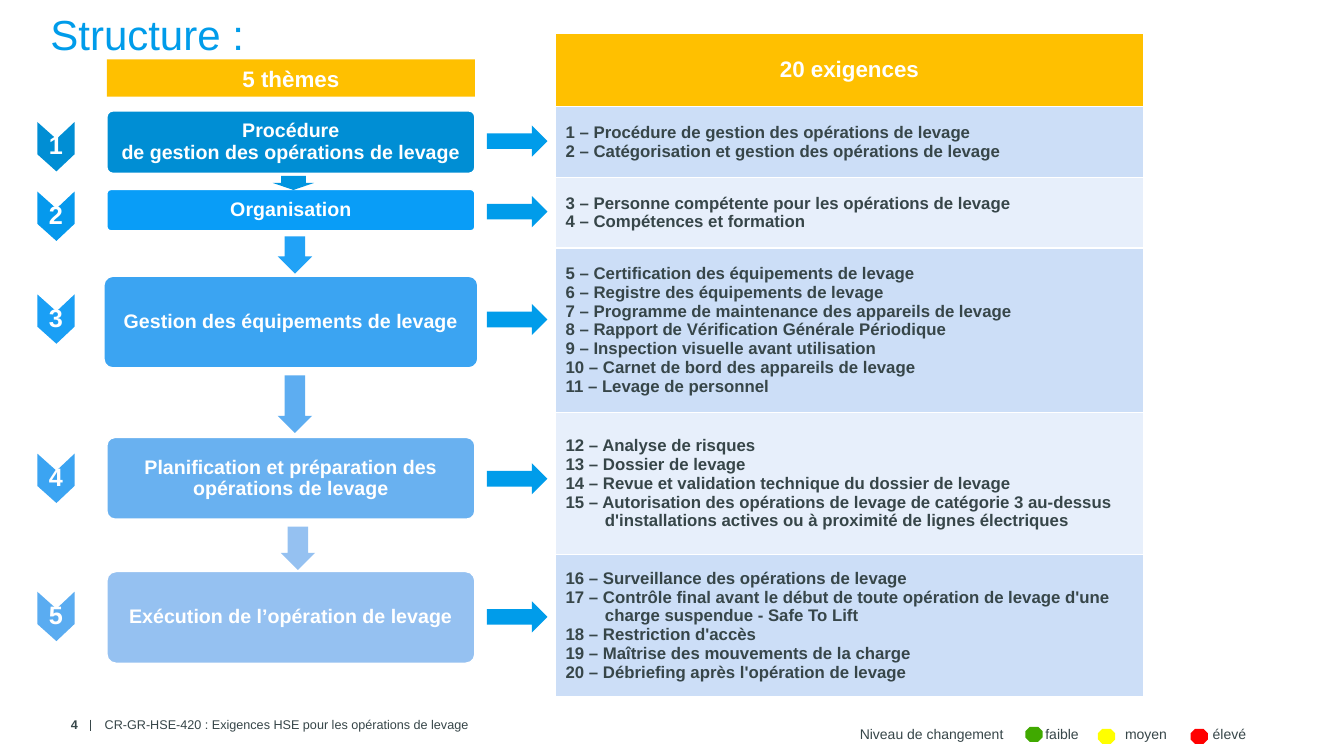
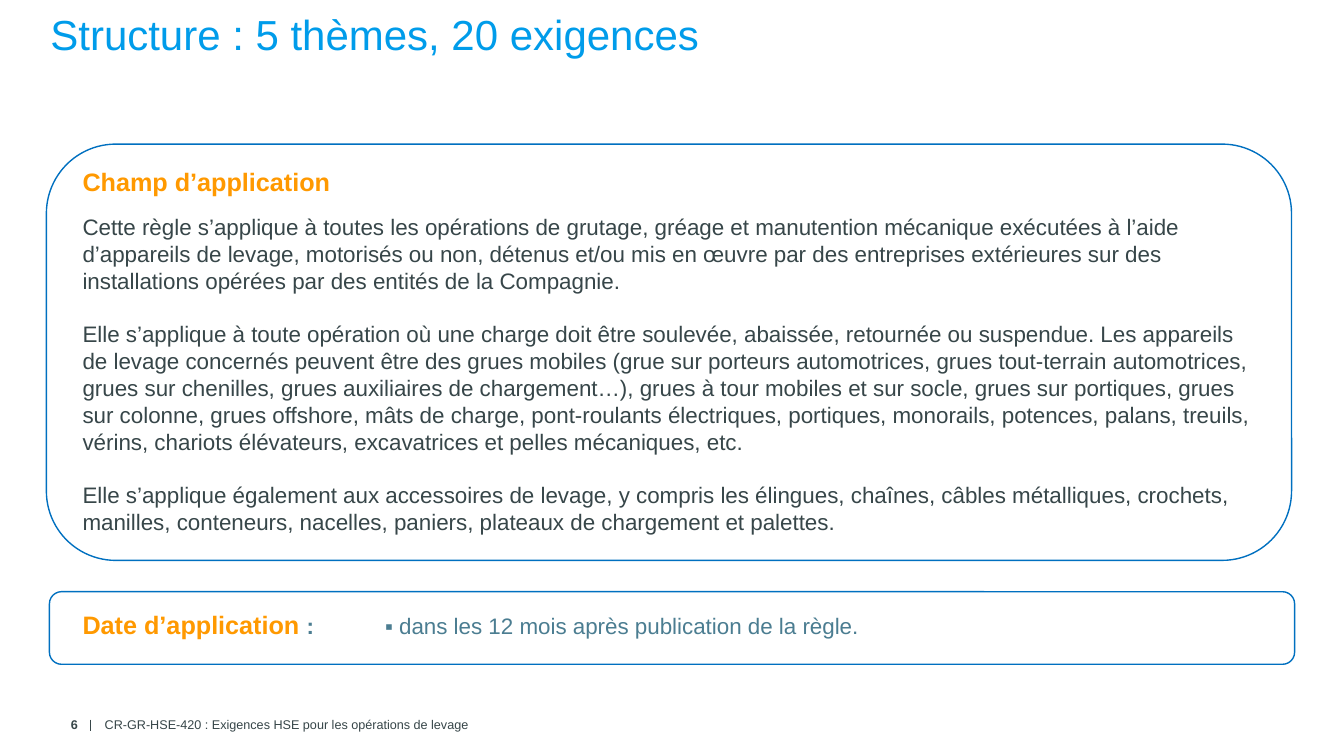
from lxml import etree
from pptx import Presentation
from pptx import util as u
from pptx.dml.color import RGBColor
from pptx.enum import shapes, text
from pptx.oxml.ns import qn

GRID = u.Inches(0.1)  # square grid cell: 133.3 columns by 75 rows
FONT = "Arial"
WHITE = RGBColor(0xFF, 0xFF, 0xFF)
SLATE = RGBColor(0x37, 0x46, 0x49)
STEEL = RGBColor(0x4B, 0x7D, 0x91)
SKY = RGBColor(0x00, 0x9C, 0xEA)
OUTLINE = RGBColor(0x00, 0x70, 0xC0)
GOLD = RGBColor(0xFF, 0xC0, 0x00)
ORANGE = RGBColor(0xFF, 0x99, 0x00)
BANDS = RGBColor(0xCC, 0xDE, 0xF7), RGBColor(0xE7, 0xEF, 0xFB)
GREEN = RGBColor(0x40, 0xA9, 0x00)
YELLOW = RGBColor(0xFF, 0xFF, 0x00)
RED = RGBColor(0xFF, 0x00, 0x00)
PRESET = shapes.MSO_SHAPE
LEFT, CENTER, RIGHT = text.PP_ALIGN.LEFT, text.PP_ALIGN.CENTER, text.PP_ALIGN.RIGHT
MIDDLE = text.MSO_ANCHOR.MIDDLE


def write(frame, lines, size, color, bold=False, align=LEFT, spacing=None, tabs=()):
    """Fill a text frame, one paragraph per line; tabs are grid columns from its edge."""
    frame.word_wrap = True
    for index, line in enumerate(lines):
        paragraph = frame.add_paragraph() if index else frame.paragraphs[0]
        paragraph.text = line
        paragraph.alignment = align
        if tabs:
            stops = etree.SubElement(paragraph._p.get_or_add_pPr(), qn("a:tabLst"))
            for column in tabs:
                etree.SubElement(stops, qn("a:tab"), pos=str(int(GRID * column)), algn="l")
        if spacing:
            paragraph.line_spacing = spacing
        paragraph.font.name = FONT
        paragraph.font.size = u.Pt(size)
        paragraph.font.bold = bold
        paragraph.font.color.rgb = color


def add_block(slide, preset, cells, fill=None, line=None):
    """Add a preset shape, or a text box if preset is None, at grid cells."""
    place = [int(GRID * cell) for cell in cells]
    if preset is None:
        return slide.shapes.add_textbox(*place)
    block = slide.shapes.add_shape(preset, *place)
    block.shadow.inherit = False
    if fill is None:
        block.fill.background()
    else:
        block.fill.solid()
        block.fill.fore_color.rgb = fill
    if line is None:
        block.line.fill.background()
    else:
        block.line.color.rgb = line
        block.line.width = u.Pt(1)
    return block


prs = Presentation()
prs.slide_width, prs.slide_height = u.Inches(13.33), u.Inches(7.5)

# Shared title and footer
slides = []
for number, heading in (("4", "Structure :"), ("6", "Structure : 5 thèmes, 20 exigences")):
    slide = prs.slides.add_slide(prs.slide_layouts[5])
    slides.append(slide)
    title = slide.shapes.title
    title.left, title.top = GRID * 4, int(GRID * 0.4)
    title.width, title.height = int(GRID * 106.3), int(GRID * 5.8)
    title.text_frame.auto_size = text.MSO_AUTO_SIZE.NONE
    title.text_frame.vertical_anchor = MIDDLE
    write(title.text_frame, [heading], 30, SKY)

    divider = slide.shapes.add_connector(
        shapes.MSO_CONNECTOR.STRAIGHT,
        GRID * 9, int(GRID * 71.4), GRID * 9, int(GRID * 72.5))
    divider.line.color.rgb = SLATE
    divider.line.width = u.Pt(1)
    etree.SubElement(divider._element.spPr, qn("a:effectLst"))

    for label, left, width, bold, align in (
        (number, 2.4, 6.3, True, RIGHT),
        ("CR-GR-HSE-420 : Exigences HSE pour les opérations de levage", 9.4, 116.5, False, LEFT),
    ):
        footer = add_block(slide, None, (left, 70.5, width, 2.8))
        footer.text_frame.vertical_anchor = MIDDLE
        write(footer.text_frame, [label], 9, SLATE, bold, align)

overview, scope = slides

# Five themes: label, box (left, top, width, height), box fill, badge top, badge fill, arrow middle
themes = (
    ("Procédure\vde gestion des opérations de levage", (10.6, 11, 36.5, 6.2),
     "008ED4", 12.1, "008ED4", 14),
    ("Organisation", (10.6, 18.8, 36.5, 4.1), "099DF7", 19, "0599ED", 21),
    ("Gestion des équipements de levage", (10.3, 27.4, 37.1, 9.1),
     "3BA4F2", 29.2, "1A9FF5", 31.7),
    ("Planification et préparation des opérations de levage", (10.6, 43.4, 36.5, 8.1),
     "69B1F0", 45, "3BA4F2", 47.5),
    ("Exécution de l’opération de levage", (10.6, 56.7, 36.5, 9.1),
     "95C1F1", 58.7, "5AACF1", 61.2),
)
for rank, (label, cells, fill, badge_top, badge_fill, middle) in enumerate(themes, 1):
    theme = add_block(overview, PRESET.ROUNDED_RECTANGLE, cells,
                      RGBColor.from_string(fill), WHITE)
    theme.adjustments[0] = 0.1
    frame = theme.text_frame
    frame.margin_left = frame.margin_right = u.Inches(0.06)
    frame.vertical_anchor = MIDDLE
    write(frame, [label], 14, WHITE, True, CENTER, 0.9)

    left, top = 37, badge_top * 10
    outline = overview.shapes.build_freeform(left + 37, top, scale=GRID / 10)
    outline.add_line_segments([
        (left + 37, top + 32), (left + 18.5, top + 49), (left, top + 32),
        (left, top), (left + 18.5, top + 17)])
    badge = outline.convert_to_shape()
    badge.shadow.inherit = False
    badge.fill.solid()
    badge.fill.fore_color.rgb = RGBColor.from_string(badge_fill)
    badge.line.fill.background()
    frame = badge.text_frame
    frame.margin_left = frame.margin_right = frame.margin_top = frame.margin_bottom = 0
    frame.vertical_anchor = MIDDLE
    write(frame, [str(rank)], 18, WHITE, True, CENTER, 0.9)

    add_block(overview, PRESET.RIGHT_ARROW, (48.3, middle - 1.55, 6, 3.1), SKY)

# Arrows from one theme to the next: centre column, top, width, height, fill
for centre, top, width, height, fill in (
    (29.1, 17.45, 4.1, 1.4, "0095E0"),
    (29.25, 23.45, 3.4, 3.7, "21A2F6"),
    (29.25, 37.25, 3.4, 5.7, "5DADF1"),
    (29.55, 52.25, 3.4, 4.3, "95C1F1"),
):
    step = add_block(overview, PRESET.DOWN_ARROW, (centre - width / 2, top, width, height),
                     RGBColor.from_string(fill))
    step.adjustments[0], step.adjustments[1] = 0.6, 0.5

themes_header = add_block(overview, PRESET.RECTANGLE, (10.6, 5.9, 36.5, 3.7), GOLD)
themes_header.text_frame.vertical_anchor = MIDDLE
write(themes_header.text_frame, ["5 thèmes"], 16, WHITE, True, CENTER)

# Twenty requirements, numbered across the rows
requirements = (
    (7, ("Procédure de gestion des opérations de levage",
         "Catégorisation et gestion des opérations de levage")),
    (7, ("Personne compétente pour les opérations de levage",
         "Compétences et formation")),
    (16.3, ("Certification des équipements de levage",
            "Registre des équipements de levage",
            "Programme de maintenance des appareils de levage",
            "Rapport de Vérification Générale Périodique",
            "Inspection visuelle avant utilisation",
            "Carnet de bord des appareils de levage",
            "Levage de personnel")),
    (14.1, ("Analyse de risques",
            "Dossier de levage",
            "Revue et validation technique du dossier de levage",
            "Autorisation des opérations de levage de catégorie 3 au-dessus "
            "d'installations actives ou à proximité de lignes électriques")),
    (14.1, ("Surveillance des opérations de levage",
            "Contrôle final avant le début de toute opération de levage d'une "
            "charge suspendue - Safe To Lift",
            "Restriction d'accès",
            "Maîtrise des mouvements de la charge",
            "Débriefing après l'opération de levage")),
)
table = overview.shapes.add_table(
    len(requirements) + 1, 1, int(GRID * 55.1), int(GRID * 3.3),
    int(GRID * 58.3), int(GRID * 65.8)).table
header = table.cell(0, 0)
table.rows[0].height = int(GRID * 7.3)
header.fill.solid()
header.fill.fore_color.rgb = GOLD
header.vertical_anchor = MIDDLE
write(header.text_frame, ["20 exigences"], 16, WHITE, True, CENTER)

first = 1
for row, (height, items) in enumerate(requirements, 1):
    table.rows[row].height = int(GRID * height)
    cell = table.cell(row, 0)
    cell.fill.solid()
    cell.fill.fore_color.rgb = BANDS[(row - 1) % 2]
    cell.vertical_anchor = MIDDLE
    numbered = [f"{n} – {item}" for n, item in enumerate(items, first)]
    write(cell.text_frame, numbered, 12, SLATE, True)
    for paragraph, item in zip(cell.text_frame.paragraphs, items):
        if len(item) > 60:  # hanging indent for items of two lines
            hang = int(GRID * 3.9)
            properties = paragraph._p.get_or_add_pPr()
            properties.set("marL", str(hang))
            properties.set("indent", str(-hang))
    first += len(items)

# Legend
legend = add_block(overview, None, (84.3, 71.5, 43, 2.7))
write(legend.text_frame, ["Niveau de changement\tfaible\tmoyen\télevé"], 10, SLATE,
      tabs=(18.4, 26.3, 35))
for left, top, level in ((101.7, 72.1, GREEN), (108.9, 72.3, YELLOW), (118.1, 72.3, RED)):
    add_block(overview, PRESET.OCTAGON, (left, top, 1.7, 1.5), level)

# Scope and date of application
for cells in ((4.6, 14.3, 123.5, 41.3), (4.9, 58.7, 123.5, 7.2)):
    add_block(scope, PRESET.ROUNDED_RECTANGLE, cells, line=OUTLINE)

application = add_block(scope, None, (7.2, 16, 118.8, 38)).text_frame
write(application, [
    "Champ d’application",
    "Cette règle s’applique à toutes les opérations de grutage, gréage et manutention "
    "mécanique exécutées à l’aide d’appareils de levage, motorisés ou non, détenus et/ou mis "
    "en œuvre par des entreprises extérieures sur des installations opérées par des entités "
    "de la Compagnie.",
    "Elle s’applique à toute opération où une charge doit être soulevée, abaissée, retournée "
    "ou suspendue. Les appareils de levage concernés peuvent être des grues mobiles (grue sur "
    "porteurs automotrices, grues tout-terrain automotrices, grues sur chenilles, grues "
    "auxiliaires de chargement…), grues à tour mobiles et sur socle, grues sur portiques, "
    "grues sur colonne, grues offshore, mâts de charge, pont-roulants électriques, portiques, "
    "monorails, potences, palans, treuils, vérins, chariots élévateurs, excavatrices et "
    "pelles mécaniques, etc.",
    "Elle s’applique également aux accessoires de levage, y compris les élingues, chaînes, "
    "câbles métalliques, crochets, manilles, conteneurs, nacelles, paniers, plateaux de "
    "chargement et palettes.",
], 16, SLATE)
lead, *rules = application.paragraphs
lead.space_after = u.Pt(12)
for rule in rules[1:]:
    rule.space_before = u.Pt(19)

deadline = add_block(scope, None, (7.2, 60, 118.8, 4)).text_frame
write(deadline, [""], 16, STEEL, tabs=(30,))
date_label, colon, delay = [deadline.paragraphs[0].add_run() for _ in range(3)]
date_label.text = "Date d’application "
colon.text = ": "
colon.font.bold = True
delay.text = "\t▪ dans les 12 mois après publication de la règle."

for heading in (lead, date_label):
    heading.font.size = u.Pt(18)
    heading.font.bold = True
    heading.font.color.rgb = ORANGE

prs.save("out.pptx")
